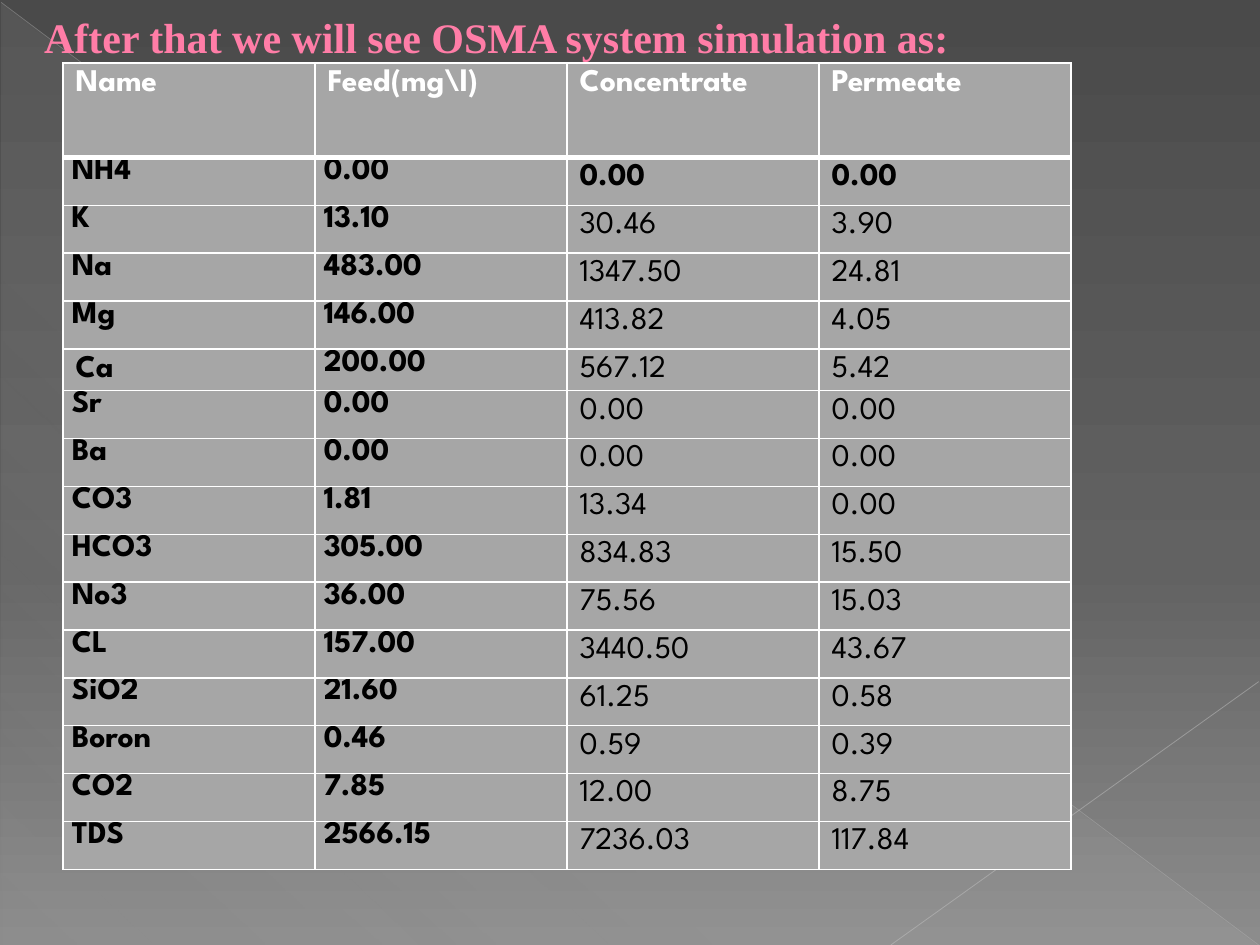
from dataclasses import dataclass

from lxml import etree
from pptx import Presentation
from pptx.dml.color import RGBColor
from pptx.enum import shapes, text
from pptx.oxml import ns
from pptx.util import Inches, Pt


@dataclass(frozen=True)
class Theme:
    """Colours, fonts and sizes of the slide."""
    backdrop: tuple = ((0, "4A4A4A", 100), (60, "626262", 100), (100, "8C8C8C", 100))
    sheen: tuple = ((0, "D2D2D2", 10), (70, "D2D2D2", 8), (100, "D2D2D2", 1))
    title: str = "FF7DA7"
    title_edge: str = "B12761"
    cell: str = "A6A6A6"
    header: str = "FFFFFF"
    body: str = "000000"
    border: str = "FFFFFF"
    title_font: str = "Times New Roman"
    table_font: str = "League Spartan"
    title_size: int = 24
    table_size: int = 18


THEME = Theme()
TITLE = "After that we will see OSMA system simulation as:"
HEADERS = ["Name", "Feed(mg\\l)", "Concentrate", "Permeate"]
IONS = [
    ["NH4", "0.00", "0.00", "0.00"],
    ["K", "13.10", "30.46", "3.90"],
    ["Na", "483.00", "1347.50", "24.81"],
    ["Mg", "146.00", "413.82", "4.05"],
    ["Ca", "200.00", "567.12", "5.42"],
    ["Sr", "0.00", "0.00", "0.00"],
    ["Ba", "0.00", "0.00", "0.00"],
    ["CO3", "1.81", "13.34", "0.00"],
    ["HCO3", "305.00", "834.83", "15.50"],
    ["No3", "36.00", "75.56", "15.03"],
    ["CL", "157.00", "3440.50", "43.67"],
    ["SiO2", "21.60", "61.25", "0.58"],
    ["Boron", "0.46", "0.59", "0.39"],
    ["CO2", "7.85", "12.00", "8.75"],
    ["TDS", "2566.15", "7236.03", "117.84"],
]


def apply(target, values):
    """Set attributes from a dict of format values."""
    for name, value in values.items():
        setattr(target, name, value)


def add_child(parent, tag, **attributes):
    """Append a DrawingML element."""
    return etree.SubElement(parent, ns.qn(tag), attributes)


def add_colour(parent, colour, opacity=100):
    """Append an RGB colour with its opacity in percent."""
    node = add_child(parent, "a:srgbClr", val=colour)
    if opacity < 100:
        add_child(node, "a:alpha", val=str(opacity * 1000))


def style_text(span, font, size, colour, bold):
    """Format one run of text."""
    apply(span.font, {"name": font, "size": Pt(size), "bold": bold})
    span.font.color.rgb = RGBColor.from_string(colour)


def fill_gradient(fill, element, stops, angle):
    """Fill with gradient stops at a clockwise angle."""
    fill.gradient()
    fill.gradient_angle = 360 - angle
    stop_list = element.find(".//" + ns.qn("a:gsLst"))
    for stop in list(stop_list):
        stop_list.remove(stop)
    for position, colour, opacity in stops:
        add_colour(add_child(stop_list, "a:gs", pos=str(position * 1000)), colour, opacity)


def add_ray(page, start, end, colour, width, opacity):
    """Draw one faint background line."""
    points = [Inches(value) for value in (*start, *end)]
    ray = page.shapes.add_connector(shapes.MSO_CONNECTOR.STRAIGHT, *points)
    ray.line.width = Pt(width)
    ray.line.color.rgb = RGBColor.from_string(colour)
    node = ray._element.find(".//" + ns.qn("a:srgbClr"))
    add_child(node, "a:alpha", val=str(opacity * 1000))
    add_child(ray._element.spPr, "a:effectLst")


def draw_backdrop(page, left, top, width, height):
    """Place the gradient, the triangle and the diagonal lines."""
    fill_gradient(page.background.fill, page._element, THEME.backdrop, 90)
    triangle = page.shapes.add_shape(
        shapes.MSO_SHAPE.RIGHT_TRIANGLE,
        *[Inches(value) for value in (left, top, width, height)])
    triangle.shadow.inherit = False
    triangle.line.fill.background()
    fill_gradient(triangle.fill, triangle._element, THEME.sheen, 133)
    right, bottom = left + width, top + height
    add_ray(page, (left, top), (right, bottom), "BFBFBF", 0.39, 35)
    add_ray(page, (right, 5.41), (7.07, bottom), "C6C6C6", 0.47, 45)


def place_title(page, left, top, width, height):
    """Move and format the title placeholder."""
    title = page.shapes.title
    apply(title, {"left": Inches(left), "top": Inches(top),
                  "width": Inches(width), "height": Inches(height)})
    frame = title.text_frame
    apply(frame, {"word_wrap": True, "auto_size": text.MSO_AUTO_SIZE.NONE,
                  "vertical_anchor": text.MSO_ANCHOR.MIDDLE,
                  "margin_top": 0, "margin_bottom": Inches(0.34)})
    para = frame.paragraphs[0]
    para.alignment = text.PP_ALIGN.LEFT
    apply(para._p.get_or_add_pPr(), {"marL": Inches(0.53), "indent": 0})
    span = para.add_run()
    span.text = TITLE
    style_text(span, THEME.title_font, THEME.title_size, THEME.title, True)
    edge = etree.Element(ns.qn("a:ln"), w=str(Pt(0.5)))
    add_colour(add_child(edge, "a:solidFill"), THEME.title_edge)
    span.font._element.insert(0, edge)
    page.shapes._spTree.append(title._element)


def set_borders(cell, top, bottom):
    """Draw the four cell borders beneath the fill in the cell properties."""
    properties = cell._tc.get_or_add_tcPr()
    widths = {"a:lnL": 1, "a:lnR": 1, "a:lnT": top, "a:lnB": bottom}
    for index, (tag, width) in enumerate(widths.items()):
        border = etree.Element(ns.qn(tag), w=str(Pt(width)))
        add_colour(add_child(border, "a:solidFill"), THEME.border)
        properties.insert(index, border)


def fill_cell(cell, value, row, column):
    """Write and format one cell by its place in the table."""
    cell.fill.solid()
    cell.fill.fore_color.rgb = RGBColor.from_string(THEME.cell)
    if row > 0 and column < 2 and value != "Ca":
        apply(cell, {"margin_left": Inches(0.07), "margin_right": Inches(0.07),
                     "margin_top": 0, "margin_bottom": 0})
    span = cell.text_frame.paragraphs[0].add_run()
    span.text = value
    style_text(span, THEME.table_font, THEME.table_size,
               THEME.body if row else THEME.header, row < 2 or column < 2)
    set_borders(cell, 3 if row == 1 else 1, 1 if row else 3)


def place_table(page, left, top, width, height):
    """Place the table of ion concentrations."""
    rows = [HEADERS, *IONS]
    table = page.shapes.add_table(
        len(rows), len(HEADERS),
        *[Inches(value) for value in (left, top, width, height)]).table
    table.horz_banding = False
    for row, values in enumerate(rows):
        table.rows[row].height = Inches({"Name": 0.75, "Ca": 0.33}.get(values[0], 0.38))
        for column, value in enumerate(values):
            fill_cell(table.cell(row, column), value, row, column)


def main():
    """Build the slide and save the deck."""
    deck = Presentation()
    apply(deck, {"slide_width": Inches(10), "slide_height": Inches(7.5)})
    page = deck.slides.add_slide(deck.slide_layouts[5])
    draw_backdrop(page, 0.01, 0.02, 9.98, 7.48)
    place_title(page, 0.25, 0.17, 9, 0.58)
    place_table(page, 0.5, 0.5, 8, 6.4)
    deck.save("out.pptx")


if __name__ == "__main__":
    main()
